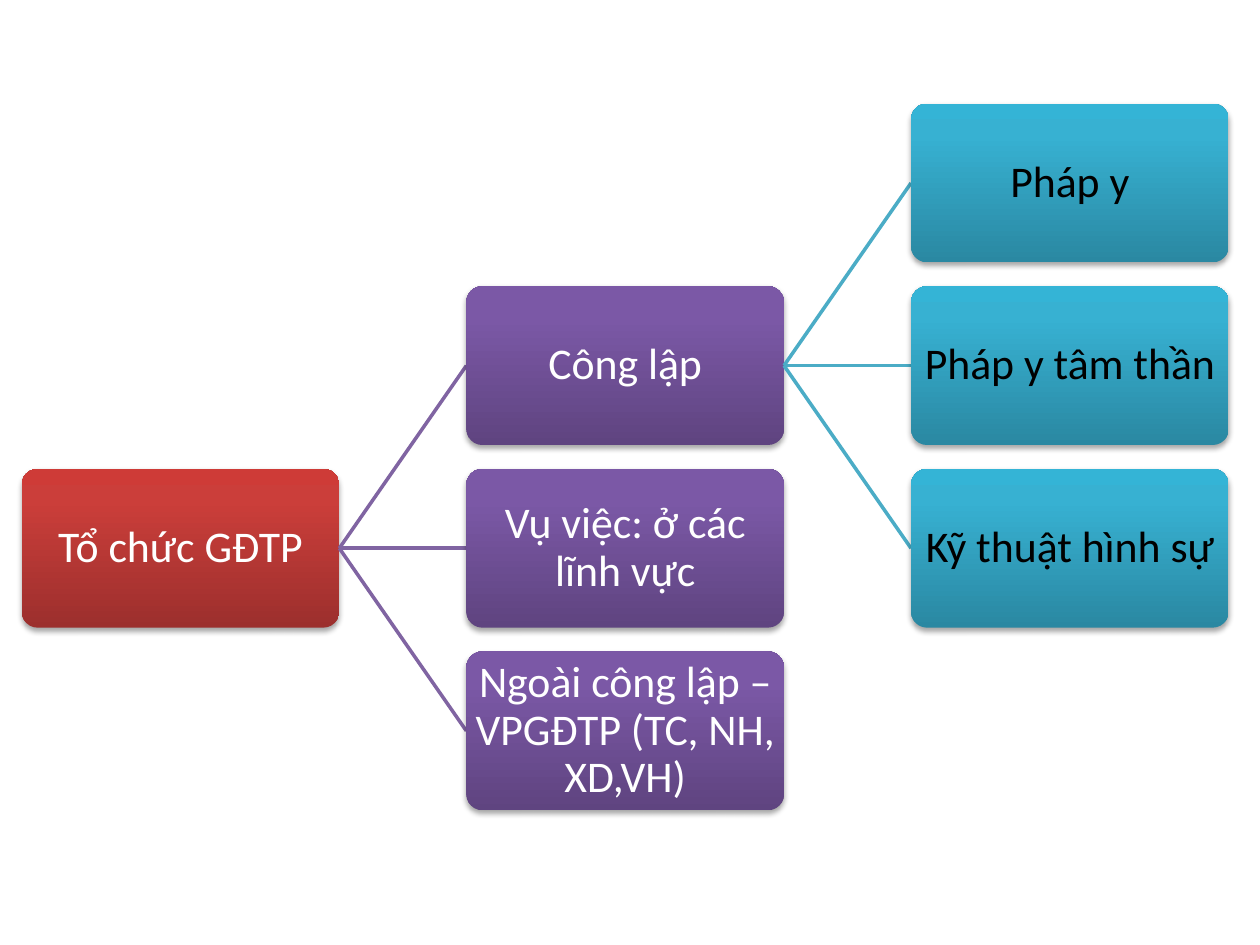
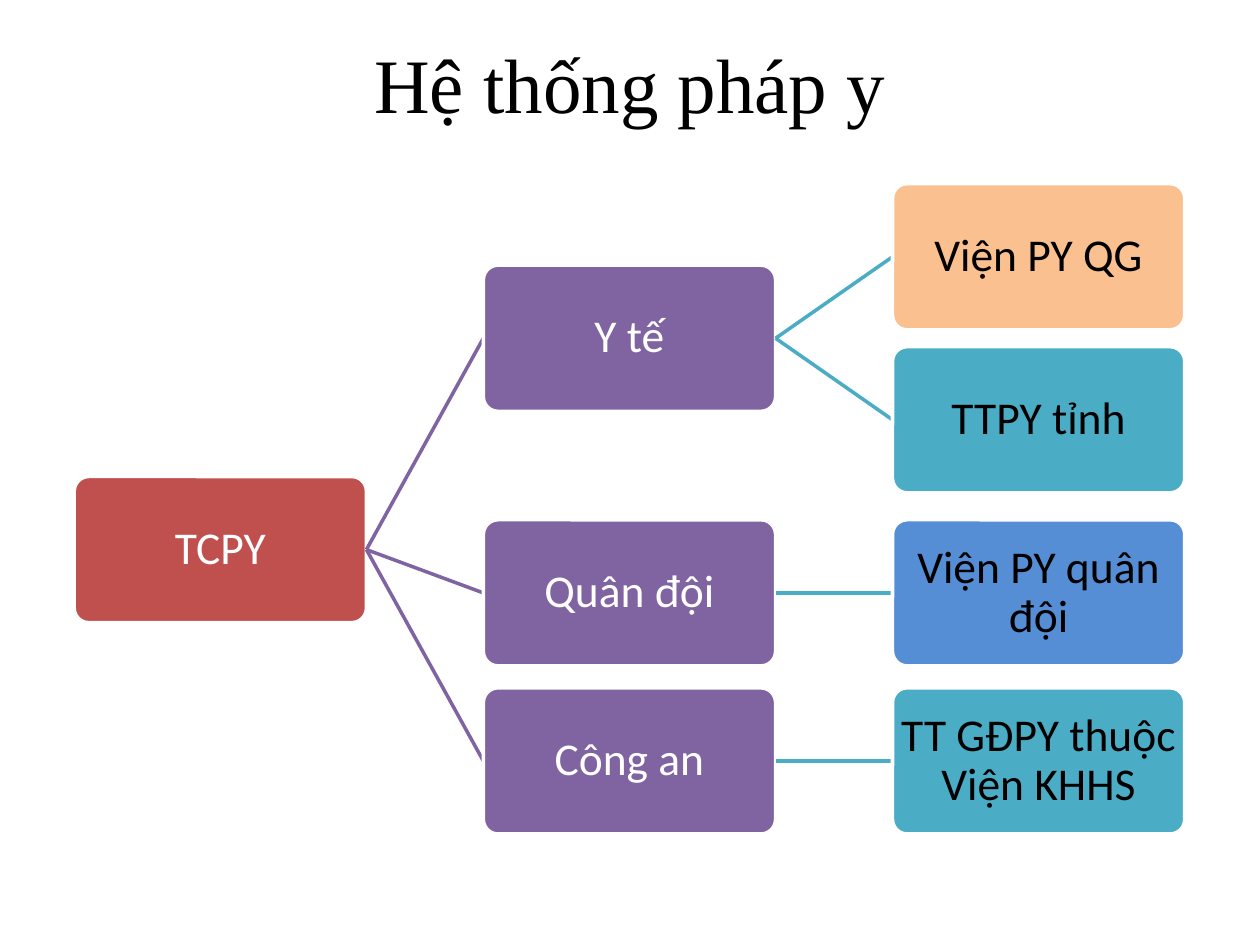
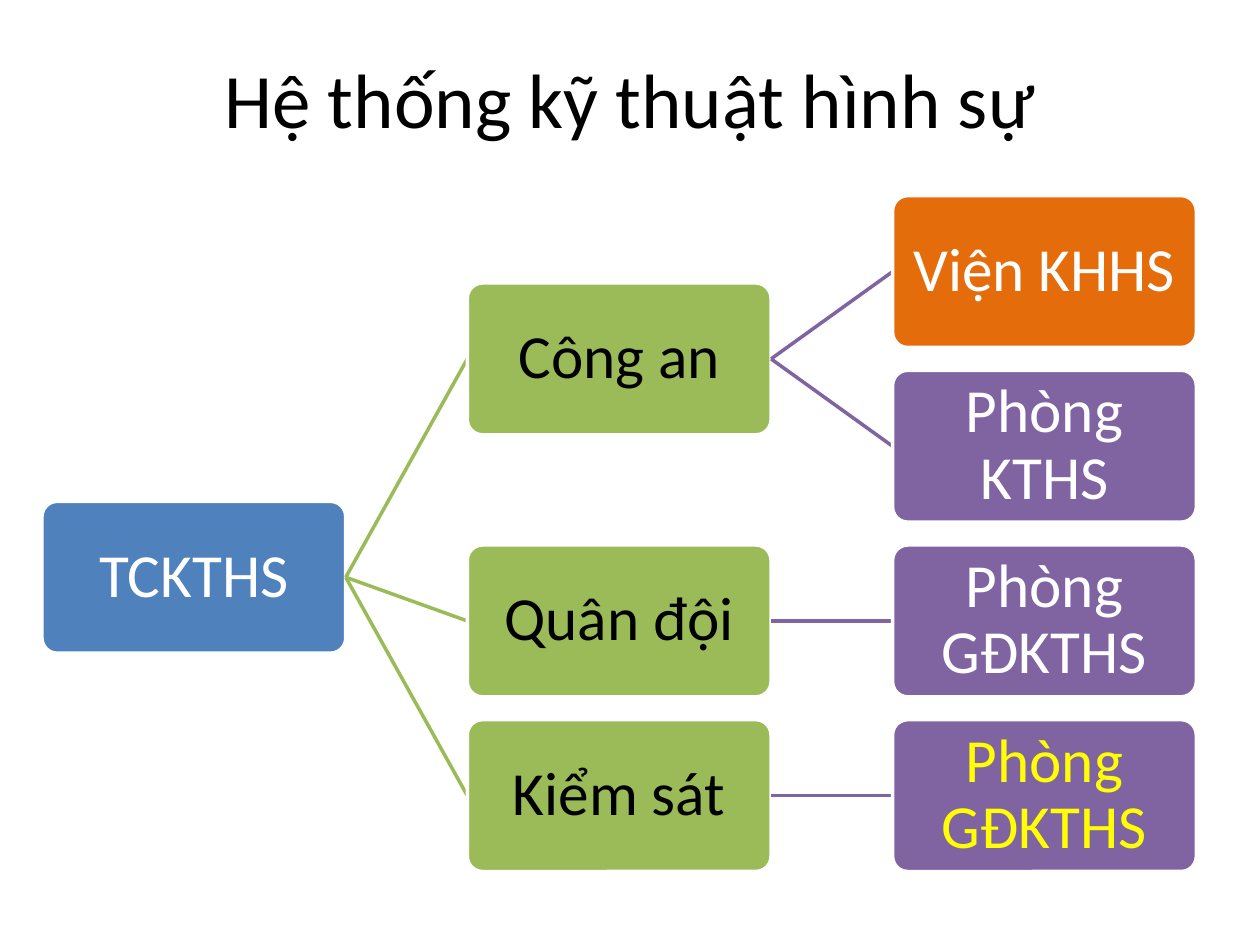
from copy import deepcopy
from dataclasses import dataclass

from lxml import etree
from pptx import Presentation
from pptx.dml.color import RGBColor
from pptx.enum.shapes import MSO_CONNECTOR, MSO_SHAPE
from pptx.enum.text import MSO_ANCHOR, PP_ALIGN
from pptx.oxml import parse_xml
from pptx.oxml.ns import nsdecls, qn
from pptx.util import Pt

ROUNDED = MSO_SHAPE.ROUNDED_RECTANGLE
STRAIGHT = MSO_CONNECTOR.STRAIGHT
CENTER = PP_ALIGN.CENTER
MIDDLE = MSO_ANCHOR.MIDDLE

COLORS = {
    "white": "FFFFFF", "black": "000000", "yellow": "FFFF00",
    "red": "C0504D", "purple": "8064A2", "teal": "4BACC6",
    "blue": "4F81BD", "green": "9BBB59", "peach": "FAC090",
    "sky": "558ED5", "orange": "E46C0A",
    "red dark": "9C2F2D", "red mid": "CB3E3A", "red light": "CE3B37",
    "purple dark": "5F4480", "purple mid": "7B58A6", "purple light": "7C57A8",
    "teal dark": "2A88A2", "teal mid": "37B1D2", "teal light": "34B4D6",
}
SHADED_STOPS = (("dark", 0), ("mid", 0.8), ("light", 1))

BODY_FONT = "Calibri"
TITLE_SIZE = 44
LINK_WIDTH = 2
COLUMN_STEP = 1.4   # in box widths
ROW_STEP = 1.15     # in box heights


@dataclass
class Unit:
    """A box of the tree: a leaf has a row, a parent is centred on its children."""
    text: str
    row: float = 0
    children: tuple = ()
    fill: str = ""
    ink: str = ""

    def centre_row(self):
        if not self.children:
            return self.row
        return (self.children[0].centre_row() + self.children[-1].centre_row()) / 2


@dataclass
class Tree:
    root: Unit
    levels: tuple       # (fill, text colour) of each column
    left: float
    top: float
    box_width: float
    text_size: float
    shaded: bool = False
    title: str = ""
    title_font: str = BODY_FONT
    title_top: float = 0
    title_height: float = 0


TREES = [
    Tree(
        Unit("Tổ chức GĐTP", children=(
            Unit("Công lập", children=(
                Unit("Pháp y", 0),
                Unit("Pháp y tâm thần", 1),
                Unit("Kỹ thuật hình sự", 2))),
            Unit("Vụ việc: ở các lĩnh vực", 2),
            Unit("Ngoài công lập – VPGĐTP (TC, NH, XD,VH)", 3))),
        levels=(("red", "white"), ("purple", "white"), ("teal", "black")),
        left=12.4, top=59.2, box_width=181.5, text_size=25, shaded=True),
    Tree(
        Unit("TCPY", children=(
            Unit("Y tế", children=(
                Unit("Viện PY QG", 0, fill="peach"),
                Unit("TTPY tỉnh", 0.97))),
            Unit("Quân đội", children=(
                Unit("Viện PY quân đội", 2, fill="sky"),)),
            Unit("Công an", children=(
                Unit("TT GĐPY thuộc Viện KHHS", 3),)))),
        levels=(("red", "white"), ("purple", "white"), ("teal", "black")),
        left=42.4, top=105, box_width=167, text_size=26,
        title="Hệ thống pháp y", title_font="Times New Roman",
        title_top=6, title_height=82.5),
    Tree(
        Unit("TCKTHS", children=(
            Unit("Công an", children=(
                Unit("Viện KHHS", 0, fill="orange"),
                Unit("Phòng KTHS", 1))),
            Unit("Quân đội", children=(
                Unit("Phòng GĐKTHS", 2),)),
            Unit("Kiểm sát", children=(
                Unit("Phòng GĐKTHS", 3, ink="yellow"),)))),
        levels=(("blue", "white"), ("green", "black"), ("purple", "white")),
        left=24, top=111.8, box_width=173.6, text_size=35,
        title="Hệ thống kỹ thuật hình sự",
        title_top=21.6, title_height=68.4),
]


def rgb(name):
    return RGBColor.from_string(COLORS[name])


def format_text(frame, text, font_name, size, ink):
    frame.text = text
    frame.word_wrap = True
    frame.vertical_anchor = MIDDLE
    paragraph = frame.paragraphs[0]
    paragraph.alignment = CENTER
    paragraph.font.name = font_name
    paragraph.font.size = Pt(size)
    paragraph.font.color.rgb = rgb(ink)
    return paragraph


def shade(box, hue):
    """Fill from dark at the bottom to light at the top, with a soft shadow below."""
    box.fill.gradient()
    box.fill.gradient_angle = 90
    properties = box._element.spPr
    stop_list = properties.find(".//" + qn("a:gsLst"))
    stop_list.append(deepcopy(stop_list[-1]))
    for stop, (tone, position) in zip(box.fill.gradient_stops, SHADED_STOPS):
        stop.position = position
        stop.color.rgb = rgb(f"{hue} {tone}")
    box.line.fill.background()
    properties.find(qn("a:effectLst")).append(parse_xml(
        f'<a:outerShdw {nsdecls("a")} blurRad="{Pt(3.1)}" dist="{Pt(1.8)}" '
        f'dir="5400000" rotWithShape="0"><a:srgbClr val="{COLORS["black"]}">'
        '<a:alpha val="35000"/></a:srgbClr></a:outerShdw>'))


def draw_link(slide, start, end, color):
    link = slide.shapes.add_connector(STRAIGHT, *map(Pt, start + end))
    link.line.color.rgb = rgb(color)
    link.line.width = Pt(LINK_WIDTH)
    etree.SubElement(link._element.spPr, qn("a:effectLst"))


def draw_unit(slide, tree, unit, level=0, parent_edge=None):
    """Draw a box, the link from its parent, and everything below it."""
    width, height = tree.box_width, tree.box_width / 2
    left = tree.left + level * width * COLUMN_STEP
    top = tree.top + unit.centre_row() * height * ROW_STEP
    middle = top + height / 2
    level_fill, level_ink = tree.levels[level]
    if parent_edge:
        draw_link(slide, parent_edge, (left, middle), level_fill)

    box = slide.shapes.add_shape(ROUNDED, Pt(left), Pt(top), Pt(width), Pt(height))
    box.adjustments[0] = 0.1
    box.shadow.inherit = False
    if tree.shaded:
        shade(box, level_fill)
    else:
        box.fill.solid()
        box.fill.fore_color.rgb = rgb(unit.fill or level_fill)
        box.line.color.rgb = rgb("white")
        box.line.width = Pt(LINK_WIDTH)
    frame = box.text_frame
    frame.margin_left = frame.margin_right = Pt(1.5)
    frame.margin_top = frame.margin_bottom = Pt(1.5)
    label = format_text(frame, unit.text, BODY_FONT, tree.text_size,
                        unit.ink or level_ink)
    label.line_spacing = 0.9

    for child in unit.children:
        draw_unit(slide, tree, child, level + 1, (left + width, middle))


def main():
    deck = Presentation()
    deck.slide_width, deck.slide_height = Pt(720), Pt(540)
    title_only, blank = deck.slide_layouts[5], deck.slide_layouts[6]
    for tree in TREES:
        slide = deck.slides.add_slide(title_only if tree.title else blank)
        if tree.title:
            title = slide.shapes.title
            title.left, title.top = Pt(36), Pt(tree.title_top)
            title.width, title.height = Pt(648), Pt(tree.title_height)
            format_text(title.text_frame, tree.title, tree.title_font,
                        TITLE_SIZE, "black")
        draw_unit(slide, tree, tree.root)
    deck.save("out.pptx")


if __name__ == "__main__":
    main()
